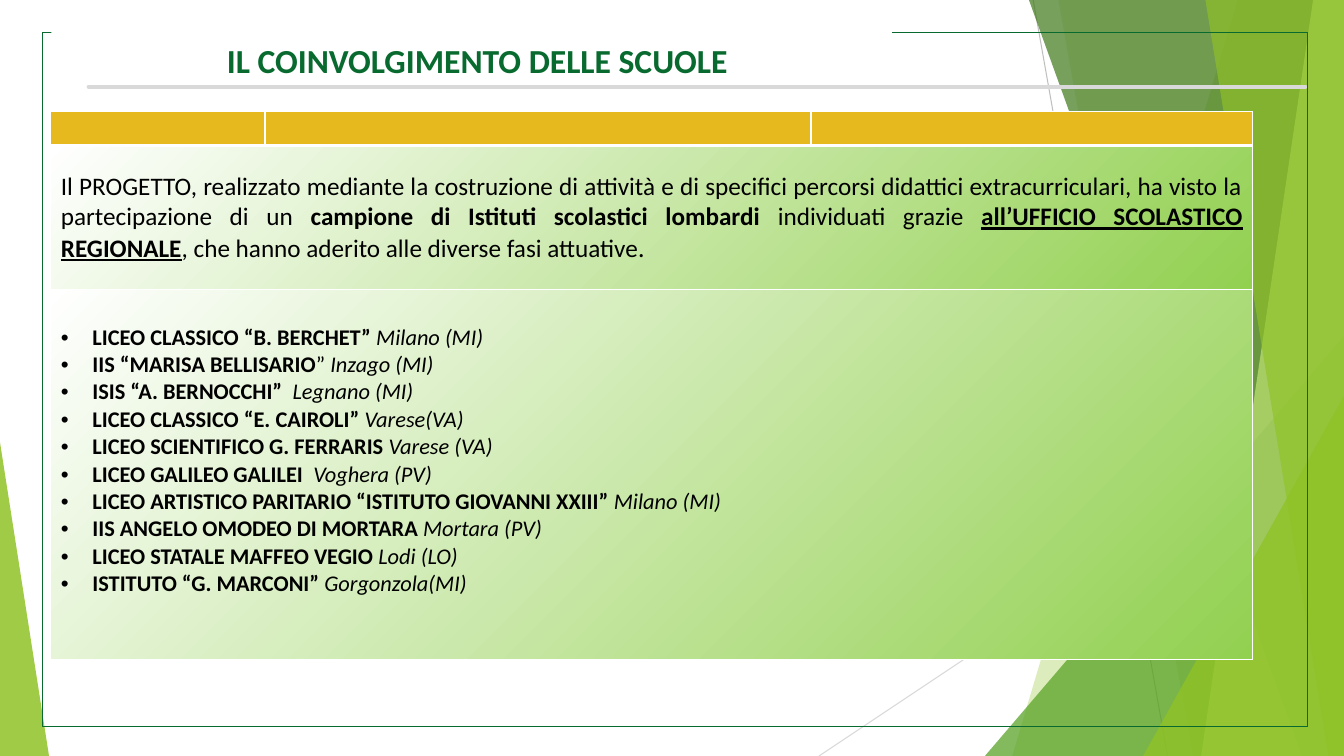
from dataclasses import dataclass

from lxml.etree import SubElement
from pptx import Presentation
from pptx.dml.color import RGBColor
from pptx.enum.shapes import MSO_CONNECTOR, MSO_SHAPE
from pptx.enum.text import MSO_ANCHOR, PP_ALIGN
from pptx.oxml.ns import qn
from pptx.util import Pt


@dataclass(frozen=True)
class Theme:
    """Colours, fonts and type sizes of the slide."""
    white: str = "FFFFFF"
    black: str = "000000"
    forest: str = "086A2E"
    lime: str = "90C226"
    leaf: str = "54A021"
    moss: str = "3F7819"
    pale: str = "C0E474"
    meadow: str = "92D050"
    gold: str = "E6B91E"
    grey: str = "BFBFBF"
    silver: str = "D9D9D9"
    font: str = "Calibri"
    stop_font: str = "Lato"
    title_size: int = 24
    intro_size: int = 18
    list_size: int = 16


THEME = Theme()
WIDTH, HEIGHT = 960, 540
BULLET_INDENT = 22.5

INTRO = [
    ("Il PROGETTO, realizzato mediante la costruzione di attività e di specifici percorsi "
     "didattici extracurriculari, ha visto la partecipazione di un ", ""),
    ("campione di Istituti scolastici lombardi ", "b"),
    ("individuati grazie ", ""),
    ("all’UFFICIO SCOLASTICO REGIONALE", "bu"),
    (", che hanno aderito alle diverse fasi attuative", ""),
]

SCHOOLS = [
    ("LICEO CLASSICO “B. BERCHET”", " ", "Milano (MI)"),
    ("IIS “MARISA BELLISARIO", "” ", "Inzago (MI)"),
    ("ISIS “A. BERNOCCHI”", "  ", "Legnano (MI)"),
    ("LICEO CLASSICO “E. CAIROLI”", " ", "Varese(VA)"),
    ("LICEO SCIENTIFICO G. FERRARIS", " ", "Varese (VA)"),
    ("LICEO GALILEO GALILEI", "  ", "Voghera (PV)"),
    ("LICEO ARTISTICO PARITARIO “ISTITUTO GIOVANNI XXIII”", " ", "Milano (MI)"),
    ("IIS ANGELO OMODEO DI MORTARA", " ", "Mortara (PV)"),
    ("LICEO STATALE MAFFEO VEGIO", " ", "Lodi (LO)"),
    ("ISTITUTO “G. MARCONI”", " ", "Gorgonzola(MI)"),
]


def rgb(color):
    """Turn a hex string into a colour."""
    return RGBColor.from_string(color)


def paint(shape, color, opacity=100):
    """Fill a shape without outline or shadow."""
    shape.shadow.inherit = False
    shape.line.fill.background()
    shape.fill.solid()
    shape.fill.fore_color.rgb = rgb(color)
    if opacity < 100:
        fill_color = shape.fill._xPr.find(qn("a:solidFill"))[0]
        SubElement(fill_color, qn("a:alpha"), val=str(opacity * 1000))


def add_band(slide, top_x, bottom_x, color, opacity):
    """Draw a slanted band reaching the right edge of the slide."""
    builder = slide.shapes.build_freeform(top_x, 0, scale=Pt(1))
    builder.add_line_segments([(WIDTH, 0), (WIDTH, HEIGHT), (bottom_x, HEIGHT)])
    paint(builder.convert_to_shape(), color, opacity)


def add_triangle(slide, left, top, width, apex, color, opacity):
    """Draw a triangle standing on the bottom edge of the slide."""
    shape = slide.shapes.add_shape(
        MSO_SHAPE.ISOSCELES_TRIANGLE, Pt(left), Pt(top), Pt(width), Pt(HEIGHT - top))
    shape.adjustments[0] = apex
    paint(shape, color, opacity)


def add_line(slide, start, end, color, width):
    """Draw a straight line with round ends."""
    line = slide.shapes.add_connector(
        MSO_CONNECTOR.STRAIGHT, Pt(start[0]), Pt(start[1]), Pt(end[0]), Pt(end[1]))
    line.line.color.rgb = rgb(color)
    line.line.width = Pt(width)
    line.line._get_or_add_ln().set("cap", "rnd")
    SubElement(line._element.spPr, qn("a:effectLst"))


def add_background(slide):
    """Draw the green facets and thin lines."""
    add_line(slide, (738, 0), (834, HEIGHT), THEME.grey, 0.75)
    add_line(slide, (WIDTH, 290), (585, HEIGHT), THEME.silver, 0.75)
    add_band(slide, 884, 723, THEME.lime, 30)
    add_band(slide, 756, 852, THEME.lime, 20)
    add_triangle(slide, 703.5, 240, 256.5, 1, THEME.leaf, 72)
    add_band(slide, 735, 929.5, THEME.moss, 70)
    add_band(slide, 938, 858, THEME.pale, 70)
    add_band(slide, 861, 949, THEME.lime, 65)
    add_triangle(slide, 816.5, 283, 143.5, 1, THEME.lime, 80)
    add_triangle(slide, 0, 316, 35, 0, THEME.lime, 85)


def add_frame(slide):
    """Draw the thin green frame."""
    frame = slide.shapes.add_shape(MSO_SHAPE.RECTANGLE, Pt(30.25), Pt(23), Pt(903.6), Pt(496))
    frame.shadow.inherit = False
    frame.fill.background()
    frame.line.color.rgb = rgb(THEME.forest)
    frame.line.width = Pt(0.5)


def set_font(paragraph, size, color):
    """Set the font shared by all runs of a paragraph."""
    paragraph.font.name = THEME.font
    paragraph.font.size = Pt(size)
    paragraph.font.color.rgb = rgb(color)


def add_runs(paragraph, runs):
    """Add runs whose style letters mean bold, italic and underline."""
    for text, style in runs:
        run = paragraph.add_run()
        run.text = text
        run.font.bold = "b" in style
        run.font.italic = "i" in style
        run.font.underline = "u" in style
    return run


def add_title(slide):
    """Draw the title on its white panel."""
    title = slide.shapes.add_textbox(Pt(36.7), Pt(16.5), Pt(600.5), Pt(44))
    paint(title, THEME.white)
    frame = title.text_frame
    frame.word_wrap = True
    frame.vertical_anchor = MSO_ANCHOR.BOTTOM
    frame.margin_left, frame.margin_right = Pt(8), 0
    frame.margin_top, frame.margin_bottom = 0, Pt(3)
    paragraph = frame.paragraphs[0]
    paragraph.alignment = PP_ALIGN.CENTER
    set_font(paragraph, THEME.title_size, THEME.forest)
    add_runs(paragraph, [("IL COINVOLGIMENTO DELLE SCUOLE", "b")])


def style_cell(cell, bottom_width, bottom_margin):
    """Give a cell white borders and its margins."""
    properties = cell._tc.get_or_add_tcPr()
    for side, width in (("L", 1), ("R", 1), ("T", 1), ("B", bottom_width)):
        border = SubElement(properties, qn(f"a:ln{side}"), w=str(Pt(width)))
        SubElement(SubElement(border, qn("a:solidFill")), qn("a:srgbClr"), val=THEME.white)
    cell.vertical_anchor = MSO_ANCHOR.MIDDLE
    cell.margin_left = cell.margin_right = Pt(7.2)
    cell.margin_top, cell.margin_bottom = Pt(min(3, bottom_margin)), Pt(bottom_margin)


def fill_gradient(cell):
    """Fade a cell from white to green."""
    cell.fill.gradient()
    cell.fill.gradient_angle = 315
    for stop, color in zip(cell.fill.gradient_stops, (THEME.white, THEME.meadow)):
        stop.color.rgb = rgb(color)


def write_intro(cell):
    """Write the justified project paragraph."""
    paragraph = cell.text_frame.paragraphs[0]
    paragraph.alignment = PP_ALIGN.JUSTIFY
    set_font(paragraph, THEME.intro_size, THEME.black)
    add_runs(paragraph, INTRO)
    add_runs(paragraph, [(".", "")]).font.name = THEME.stop_font


def write_schools(cell):
    """Write the bulleted list of schools."""
    frame = cell.text_frame
    for index, (school, gap, place) in enumerate(SCHOOLS):
        paragraph = frame.add_paragraph() if index else frame.paragraphs[0]
        properties = paragraph._p.get_or_add_pPr()
        properties.set("marL", str(Pt(BULLET_INDENT)))
        properties.set("indent", str(-Pt(BULLET_INDENT)))
        SubElement(properties, qn("a:buFont"), typeface="Arial")
        SubElement(properties, qn("a:buChar"), char="•")
        set_font(paragraph, THEME.list_size, THEME.black)
        add_runs(paragraph, [(school, "b"), (gap, ""), (place, "i")])


def add_schools_table(slide):
    """Draw the table with its header band and two merged rows."""
    widths, heights = (153, 390, 315.5), (24, 103, 264.5)
    table = slide.shapes.add_table(
        3, 3, Pt(36.3), Pt(79.9), Pt(sum(widths)), Pt(sum(heights))).table
    for column, width in zip(table.columns, widths):
        column.width = Pt(width)
    for row, height, border, margin in zip(table.rows, heights, (3, 1, 1), (0, 3, 23)):
        row.height = Pt(height)
        for cell in row.cells:
            style_cell(cell, border, margin)
    for cell in table.rows[0].cells:
        cell.fill.solid()
        cell.fill.fore_color.rgb = rgb(THEME.gold)
    for index, write in ((1, write_intro), (2, write_schools)):
        for cell in table.rows[index].cells:
            fill_gradient(cell)
        table.cell(index, 0).merge(table.cell(index, 2))
        write(table.cell(index, 0))


def main():
    """Build the slide and save it."""
    presentation = Presentation()
    presentation.slide_width, presentation.slide_height = Pt(WIDTH), Pt(HEIGHT)
    slide = presentation.slides.add_slide(presentation.slide_layouts[6])
    add_background(slide)
    add_line(slide, (63.4, 62), (932.4, 62), THEME.silver, 3)
    add_frame(slide)
    add_schools_table(slide)
    add_title(slide)
    presentation.save("out.pptx")


if __name__ == "__main__":
    main()
